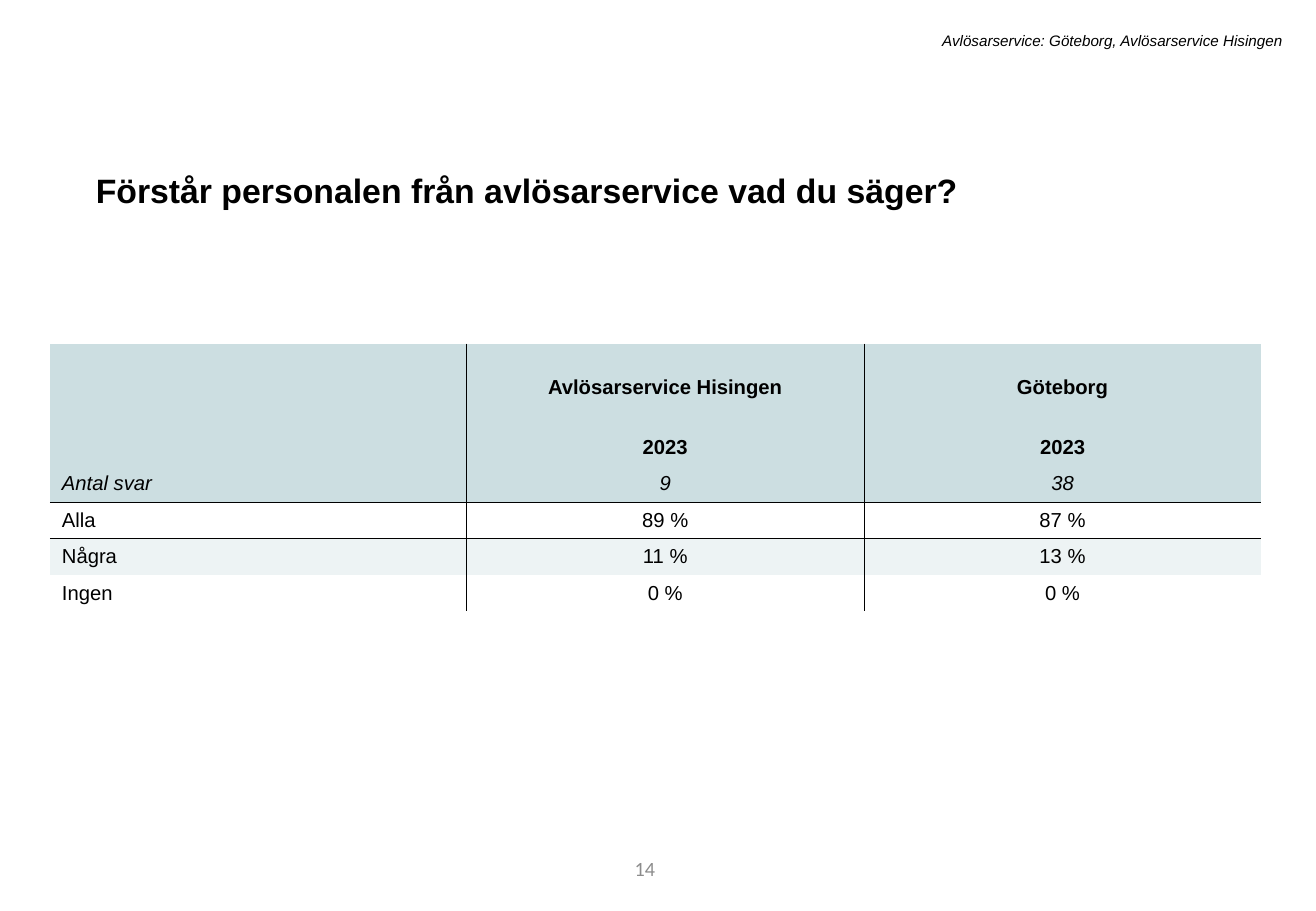
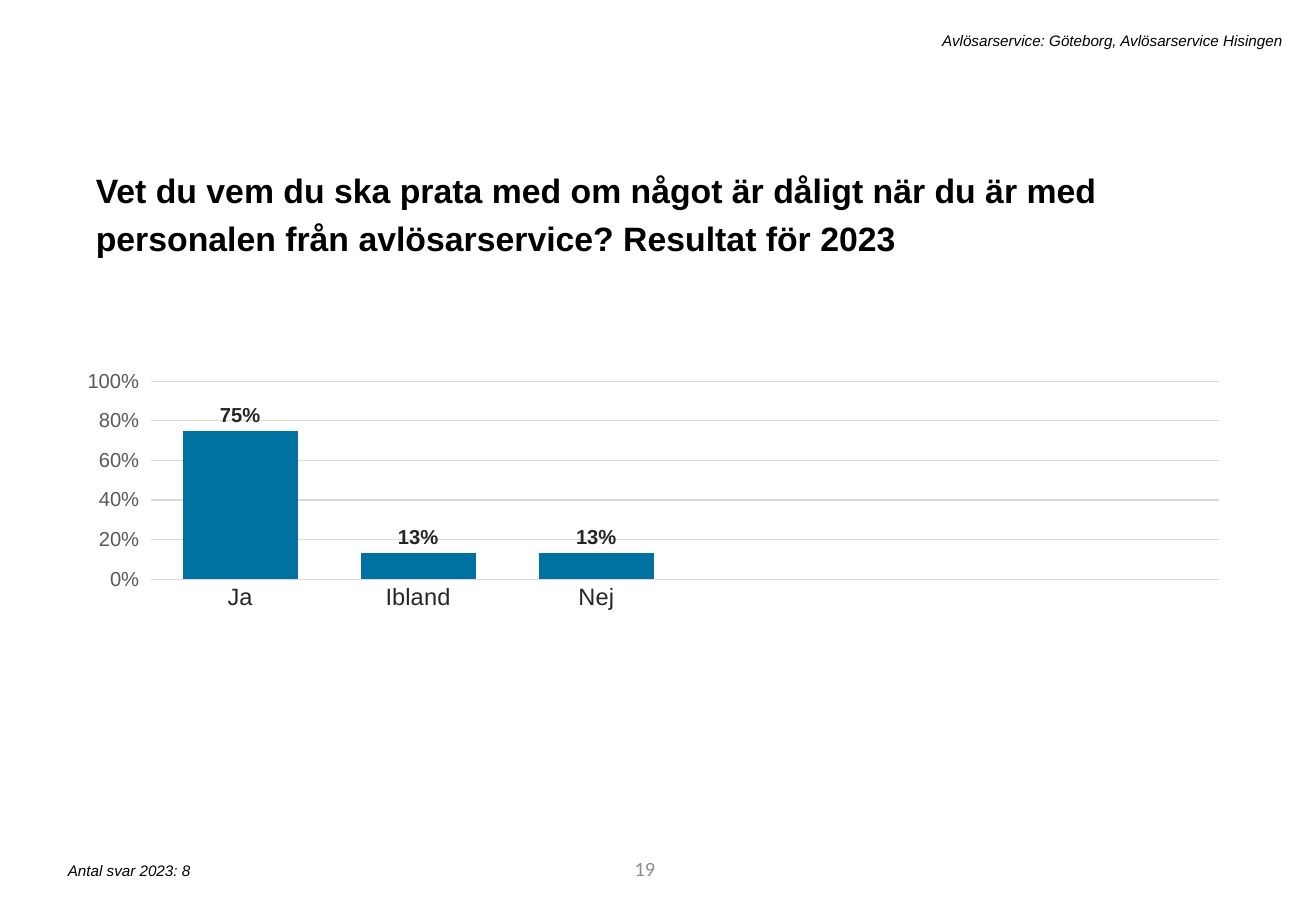
from lxml.etree import SubElement
from pptx import Presentation
from pptx.chart.data import CategoryChartData
from pptx.dml.color import RGBColor
from pptx.enum.chart import XL_CHART_TYPE, XL_LABEL_POSITION, XL_TICK_MARK
from pptx.enum.text import MSO_ANCHOR as ANCHOR, PP_ALIGN as ALIGN
from pptx.oxml import parse_xml
from pptx.oxml.ns import nsdecls, qn
from pptx.util import Emu, Pt

HEADER = "Avlösarservice: Göteborg, Avlösarservice Hisingen"
TABLE_PAGE = {"number": "14", "title": "Förstår personalen från avlösarservice vad du säger?"}
CHART_PAGE = {
    "number": "19",
    "title": "Vet du vem du ska prata med om något är dåligt när du är med "
             "personalen från avlösarservice? Resultat för 2023",
}
ANSWER_COUNT = "Antal svar 2023: 8"
TABLE_ROWS = [
    ("", "Avlösarservice Hisingen", "Göteborg"),
    ("", "2023", "2023"),
    ("Antal svar", "9", "38"),
    ("Alla", "89 %", "87 %"),
    ("Några", "11 %", "13 %"),
    ("Ingen", "0 %", "0 %"),
]
ANSWERS = [("Ja", 0.75), ("Ibland", 0.13), ("Nej", 0.13), ("", None), ("", None), ("", None)]

BLACK, GREY, BAR_BLUE = "000000", "8C8C8C", "0071A1"
HEAD_FILL, BAND_FILL, GRID = "CCDEE1", "EDF3F4", "D9D9D9"
AXIS_TEXT, LABEL_TEXT = "595959", "262626"

TITLE_FONT = {"size": Pt(20), "name": "Arial", "bold": True}
NOTE_FONT = {"size": Pt(9), "name": "Arial", "italic": True}
NUMBER_FONT = {"size": Pt(12), "name": "Calibri"}
CELL_FONT = {"size": Pt(12), "name": "Arial"}

COLUMN_WIDTHS = (343, 327, 327)
ROW_HEIGHTS = (50, 50, 30, 30, 30, 30)
HEADING_ROWS, COUNT_ROW, BAND_ROW = 2, 2, 4
PLOT = {"x": 0.054, "y": 0.154, "w": 0.937, "h": 0.413}
NO_GRID_STYLE = "{2D5ABB26-0587-4C30-8999-92F81FD0307C}"


def px(length):
    return Emu(length * 9144)


def box(*lengths):
    return [px(length) for length in lengths]


def rgb(color):
    return RGBColor.from_string(color)


def style(target, values):
    for name, value in values.items():
        setattr(target, name, value)


def style_font(font, values, color=BLACK):
    style(font, values)
    font.color.rgb = rgb(color)


def add_text(slide, place, text, font, color=BLACK, anchor=ANCHOR.TOP, **paragraph_format):
    frame = slide.shapes.add_textbox(*box(*place)).text_frame
    style(frame, {"word_wrap": True, "vertical_anchor": anchor})
    paragraph = frame.paragraphs[0]
    style(paragraph, paragraph_format)
    run = paragraph.add_run()
    run.text = text
    style_font(run.font, font, color)


def add_page(presentation, page):
    slide = presentation.slides.add_slide(presentation.slide_layouts[6])
    add_text(slide, (305, 695, 244, 40), page["number"], NUMBER_FONT, GREY,
             ANCHOR.MIDDLE, alignment=ALIGN.RIGHT)
    add_text(slide, (69, 128, 940, 47), page["title"], TITLE_FONT,
             line_spacing=1.2, space_before=Pt(10))
    add_text(slide, (179, 21, 886, 25), HEADER, NOTE_FONT, alignment=ALIGN.RIGHT)
    return slide


def add_borders(cell, sides):
    properties = cell._tc.get_or_add_tcPr()
    for index, side in enumerate(sides):
        properties.insert(index, parse_xml(
            f'<a:ln{side} {nsdecls("a")} w="3175"><a:solidFill>'
            f'<a:srgbClr val="{BLACK}"/></a:solidFill></a:ln{side}>'))


def fill_cell(cell, text, row, column):
    if row <= COUNT_ROW or row == BAND_ROW:
        cell.fill.solid()
        cell.fill.fore_color.rgb = rgb(HEAD_FILL if row <= COUNT_ROW else BAND_FILL)
    else:
        cell.fill.background()
    heading = row < HEADING_ROWS
    cell.vertical_anchor = ANCHOR.BOTTOM if heading else ANCHOR.MIDDLE
    cell.text = text
    paragraph = cell.text_frame.paragraphs[0]
    paragraph.alignment = ALIGN.CENTER if column else ALIGN.LEFT
    style_font(paragraph.font, CELL_FONT | {"bold": heading, "italic": row == COUNT_ROW})
    for run in paragraph.runs:
        style_font(run.font, CELL_FONT | {"bold": heading, "italic": row == COUNT_ROW})
    drawn = {
        "L": column > 0,
        "R": column < len(COLUMN_WIDTHS) - 1,
        "T": row == COUNT_ROW + 1,
        "B": row == COUNT_ROW,
    }
    add_borders(cell, [side for side, shown in drawn.items() if shown])


def add_answer_table(slide):
    frame = slide.shapes.add_table(
        len(ROW_HEIGHTS), len(COLUMN_WIDTHS),
        *box(41, 283, sum(COLUMN_WIDTHS), sum(ROW_HEIGHTS)))
    table = frame.table
    style(table, {"first_row": False, "horz_banding": False})
    for style_id in frame.element.iter(qn("a:tableStyleId")):
        style_id.text = NO_GRID_STYLE
    for column, width in zip(table.columns, COLUMN_WIDTHS):
        column.width = px(width)
    for row, height in zip(table.rows, ROW_HEIGHTS):
        row.height = px(height)
    for row, texts in enumerate(TABLE_ROWS):
        for column, text in enumerate(texts):
            fill_cell(table.cell(row, column), text, row, column)


def place_plot(chart):
    plot_area = next(chart.element.iter(qn("c:plotArea")))
    for old_layout in plot_area.findall(qn("c:layout")):
        plot_area.remove(old_layout)
    layout = parse_xml(f'<c:layout {nsdecls("c")}/>')
    manual = SubElement(layout, qn("c:manualLayout"))
    values = {"layoutTarget": "inner", "xMode": "edge", "yMode": "edge"} | PLOT
    for name, value in values.items():
        SubElement(manual, qn(f"c:{name}")).set("val", str(value))
    plot_area.insert(0, layout)


def style_line(line, color):
    line.color.rgb = rgb(color)
    line.width = Pt(0.75)


def add_answer_chart(slide):
    data = CategoryChartData(number_format="0%")
    data.categories = [answer for answer, share in ANSWERS]
    data.add_series("Series 1", [share for answer, share in ANSWERS])
    chart = slide.shapes.add_chart(
        XL_CHART_TYPE.COLUMN_CLUSTERED, *box(72, 253, 940, 395), data).chart
    style(chart, {"has_legend": False, "has_title": False})
    style_font(chart.font, {"size": Pt(10), "name": "Arial"})

    category_axis, value_axis = chart.category_axis, chart.value_axis
    category_axis.major_tick_mark = XL_TICK_MARK.NONE
    style_font(category_axis.tick_labels.font, {"size": Pt(14), "name": "Arial"}, LABEL_TEXT)
    style_line(category_axis.format.line, GRID)

    style(value_axis, {"minimum_scale": 0, "maximum_scale": 1, "major_unit": 0.2,
                       "has_major_gridlines": True, "major_tick_mark": XL_TICK_MARK.OUTSIDE})
    style(value_axis.tick_labels, {"number_format": "0%", "number_format_is_linked": False})
    style_font(value_axis.tick_labels.font, CELL_FONT, AXIS_TEXT)
    value_axis.format.line.fill.background()
    style_line(value_axis.major_gridlines.format.line, GRID)

    plot = chart.plots[0]
    style(plot, {"gap_width": 55, "vary_by_categories": False, "has_data_labels": True})
    style(plot.data_labels, {"show_value": True, "number_format": "0%",
                             "number_format_is_linked": False,
                             "position": XL_LABEL_POSITION.OUTSIDE_END})
    style_font(plot.data_labels.font, CELL_FONT | {"bold": True}, LABEL_TEXT)
    bar_fill = plot.series[0].format.fill
    bar_fill.solid()
    bar_fill.fore_color.rgb = rgb(BAR_BLUE)
    place_plot(chart)


def main():
    presentation = Presentation()
    style(presentation, {"slide_width": px(1083), "slide_height": px(750)})
    add_answer_table(add_page(presentation, TABLE_PAGE))
    chart_slide = add_page(presentation, CHART_PAGE)
    add_text(chart_slide, (46, 704, 441, 25), ANSWER_COUNT, NOTE_FONT)
    add_answer_chart(chart_slide)
    presentation.save("out.pptx")


if __name__ == "__main__":
    main()
